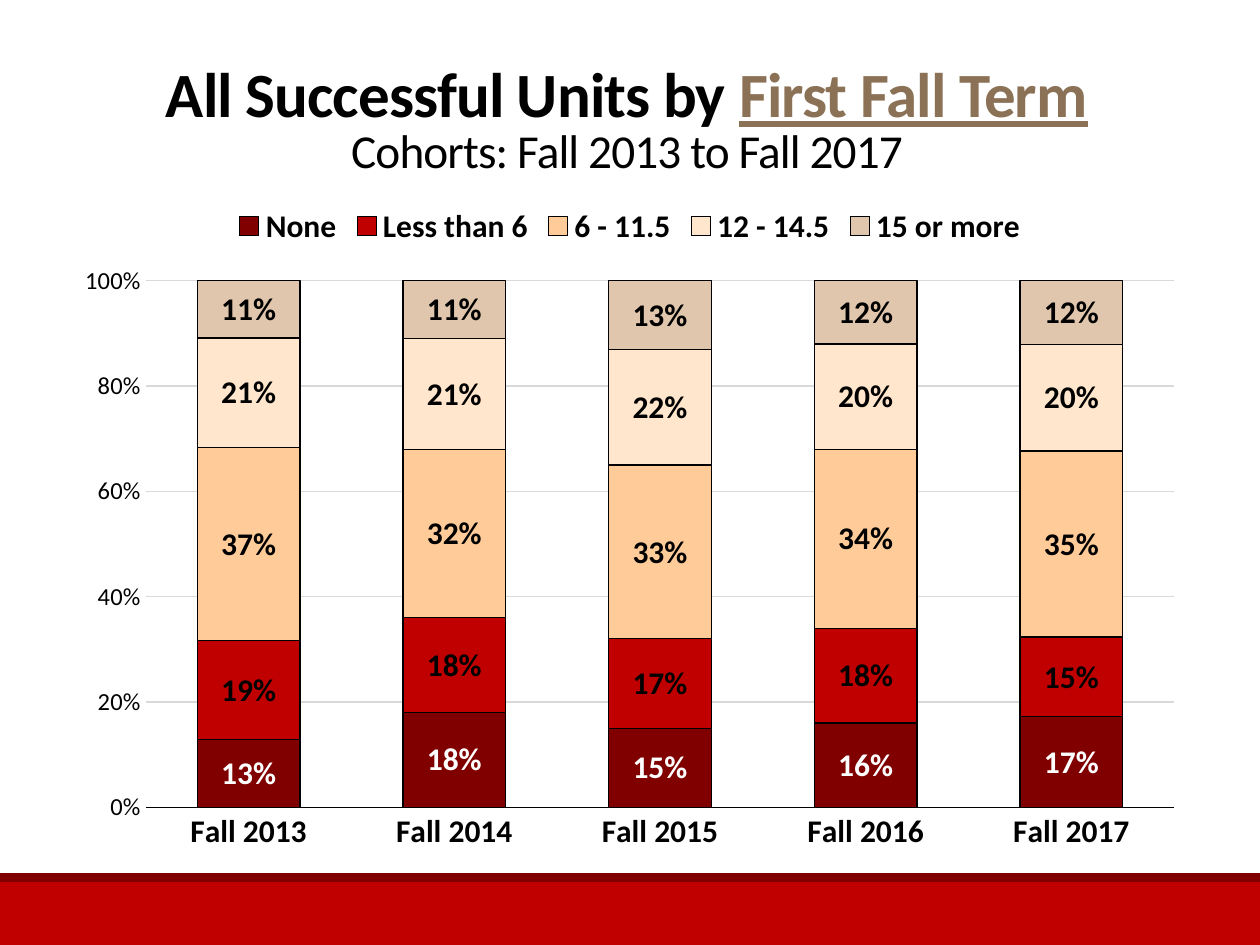
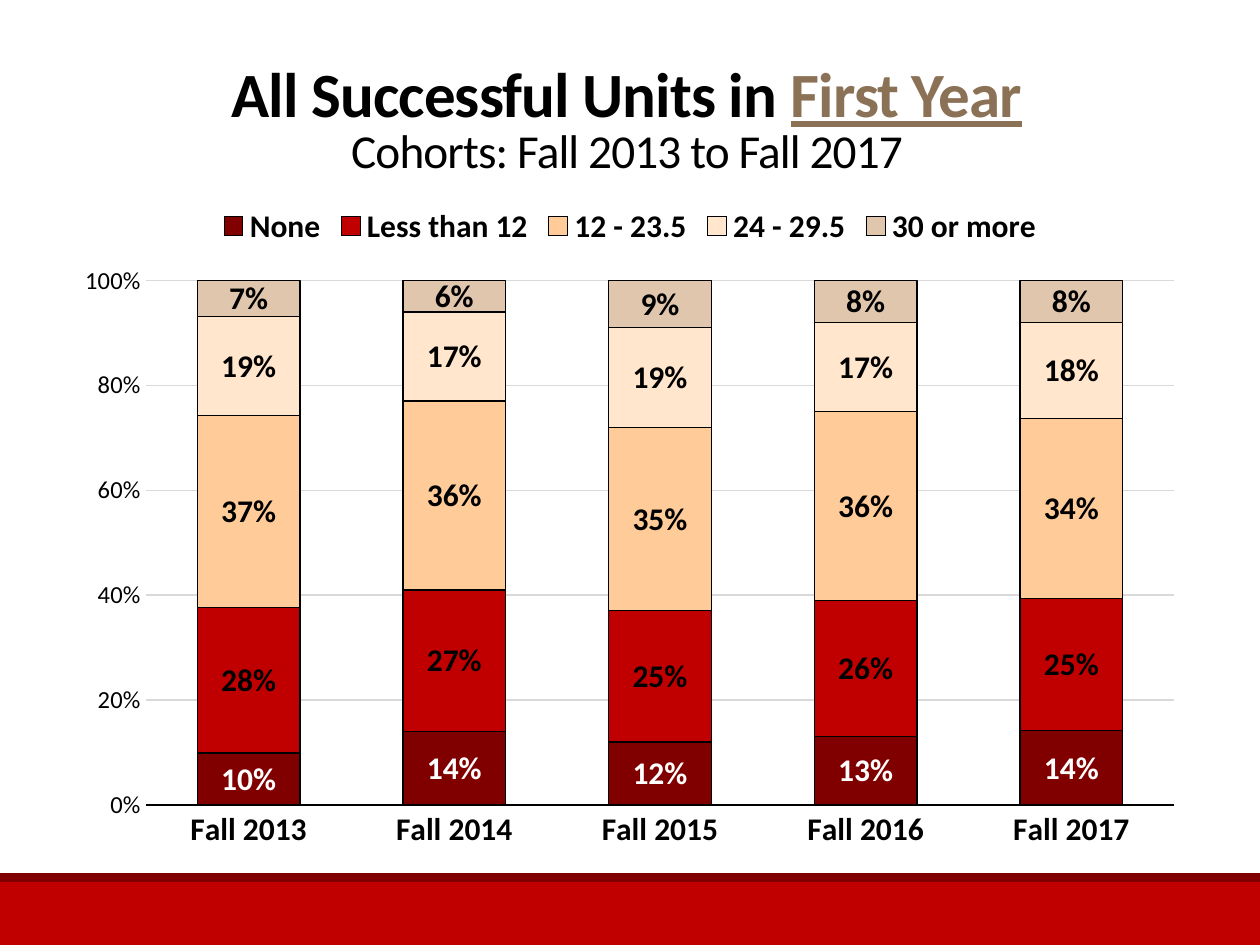
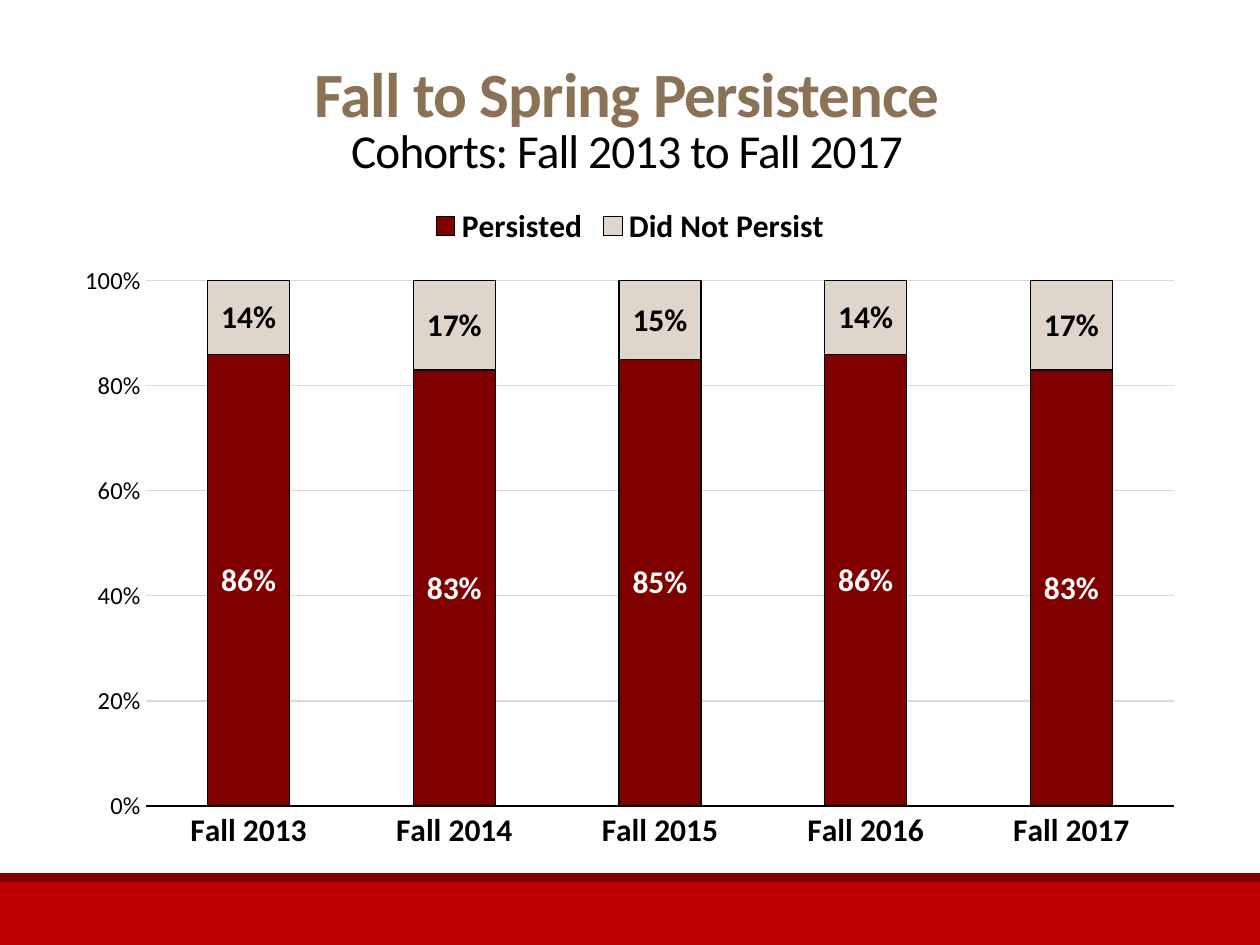
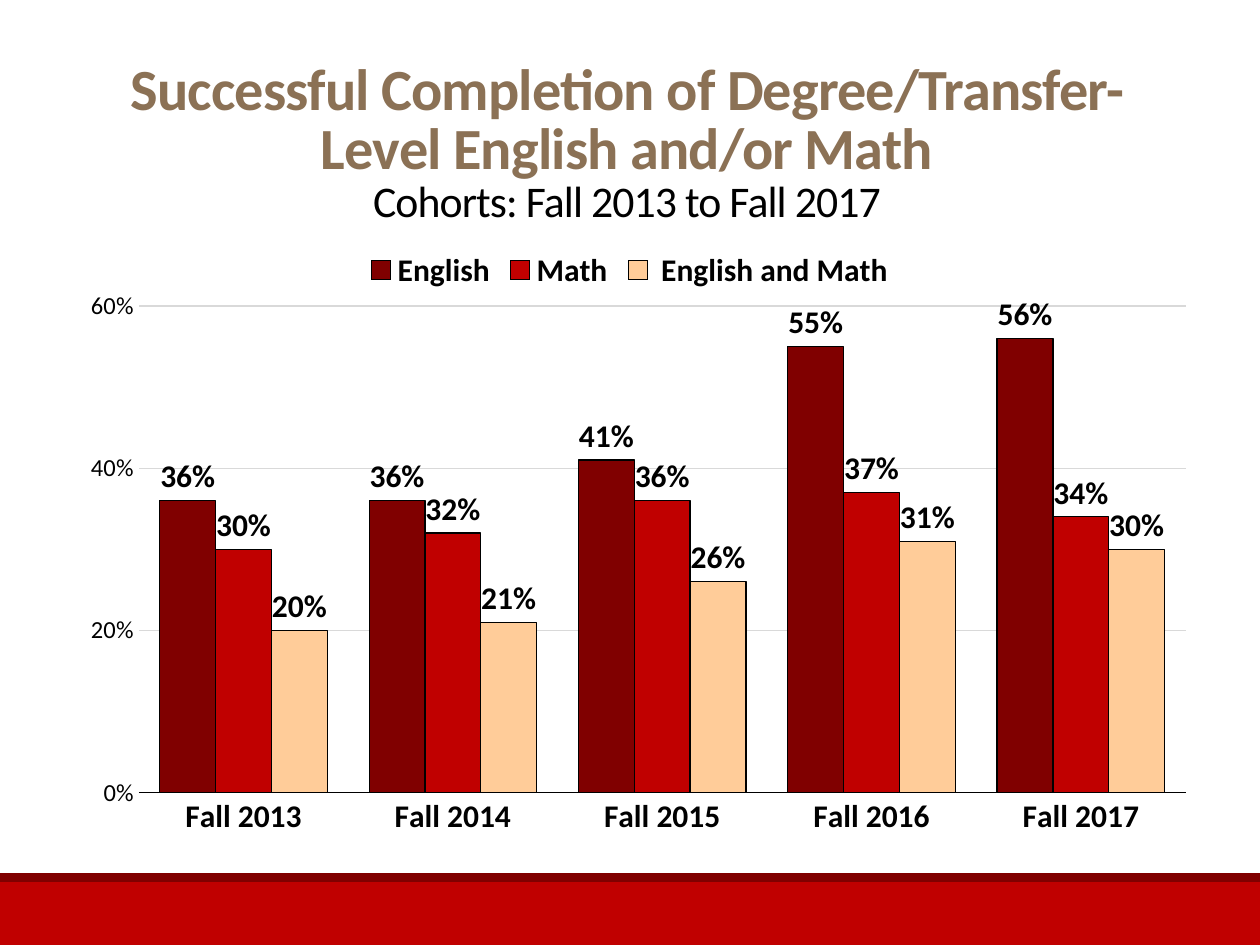
from pptx import Presentation
from pptx.chart.data import CategoryChartData
from pptx.dml.color import RGBColor
from pptx.enum.chart import XL_CHART_TYPE, XL_LABEL_POSITION, XL_LEGEND_POSITION, XL_TICK_MARK
from pptx.enum.shapes import MSO_SHAPE
from pptx.enum.text import MSO_ANCHOR, PP_ALIGN
from pptx.oxml import parse_xml
from pptx.oxml.ns import nsdecls, qn
from pptx.util import Inches, Pt

STACKED = XL_CHART_TYPE.COLUMN_STACKED_100
CLUSTERED = XL_CHART_TYPE.COLUMN_CLUSTERED
NO_TICK = XL_TICK_MARK.NONE
CENTER = XL_LABEL_POSITION.CENTER
OUTSIDE = XL_LABEL_POSITION.OUTSIDE_END
FONT = "Calibri"
COLORS = {
    "black": "000000", "white": "FFFFFF", "maroon": "800000", "red": "C00000",
    "orange": "FFCC99", "cream": "FFE6CC", "tan": "E0C6AD", "stone": "DFD5CB",
    "brown": "8B7155", "grid": "D9D9D9",
}
RGB = {name: RGBColor.from_string(value) for name, value in COLORS.items()}
BANDS = [(7, 0.5, "red"), (6.93, 0.07, "maroon")]
COHORTS = [f"Fall {year}" for year in range(2013, 2018)]
SUBTITLE = "Cohorts: Fall 2013 to Fall 2017"
STACKED_PLOT = (0.073, 0.133, 0.907, 0.784)

# Title runs are (text, color, underlined); series are (name, color, percents)
SLIDES = [
    dict(
        title=[("All Successful Units by ", "black", False), ("First Fall Term", "brown", True)],
        sizes=(36, 27), title_height=1.12, chart_height=5.33,
        kind=STACKED, gap=100, plot=STACKED_PLOT,
        series=[
            ("None", "maroon", (13, 18, 15, 16, 17)),
            ("Less than 6", "red", (19, 18, 17, 18, 15)),
            ("6 - 11.5", "orange", (37, 32, 33, 34, 35)),
            ("12 - 14.5", "cream", (21, 21, 22, 20, 20)),
            ("15 or more", "tan", (11, 11, 13, 12, 12)),
        ]),
    dict(
        title=[("All Successful Units in ", "black", False), ("First Year", "brown", True)],
        sizes=(36, 27), title_height=1.12, chart_height=5.31,
        kind=STACKED, gap=100, plot=STACKED_PLOT,
        series=[
            ("None", "maroon", (10, 14, 12, 13, 14)),
            ("Less than 12", "red", (28, 27, 25, 26, 25)),
            ("12 - 23.5", "orange", (37, 36, 35, 36, 34)),
            ("24 - 29.5", "cream", (19, 17, 19, 17, 18)),
            ("30 or more", "tan", (7, 6, 9, 8, 8)),
        ]),
    dict(
        title=[("Fall to Spring Persistence", "brown", False)],
        sizes=(36, 27), title_height=1.12, chart_height=5.32,
        kind=STACKED, gap=150, plot=STACKED_PLOT,
        series=[
            ("Persisted", "maroon", (86, 83, 85, 86, 83)),
            ("Did Not Persist", "stone", (14, 17, 15, 14, 17)),
        ]),
    dict(
        title=[("Successful Completion of Degree/Transfer-Level English and/or Math",
                "brown", False)],
        sizes=(33.3, 25), title_height=1.47, chart_height=4.95,
        kind=CLUSTERED, gap=75, plot=(0.067, 0.113, 0.923, 0.78),
        series=[
            ("English", "maroon", (36, 36, 41, 55, 56)),
            ("Math", "red", (30, 32, 36, 37, 34)),
            (" English and Math", "orange", (20, 21, 26, 31, 30)),
        ]),
]


def set_font(font, size, color="black", bold=True):
    font.name = FONT
    font.size = Pt(size)
    font.bold = bold
    font.color.rgb = RGB[color]


def add_text(p, text, size, color="black", bold=True, underline=False):
    r = p.add_run()
    r.text = text
    set_font(r.font, size, color, bold)
    r.font.underline = underline
    r._r.get_or_add_rPr().set("spc", "-50")


prs = Presentation()
prs.slide_width, prs.slide_height = Inches(10), Inches(7.5)

for item in SLIDES:
    s = prs.slides.add_slide(prs.slide_layouts[6])
    s.background.fill.solid()
    s.background.fill.fore_color.rgb = RGB["white"]

    # Footer bands
    for top, height, color in BANDS:
        sp = s.shapes.add_shape(MSO_SHAPE.RECTANGLE, 0, Inches(top), prs.slide_width, Inches(height))
        sp.shadow.inherit = False
        sp.fill.solid()
        sp.fill.fore_color.rgb = RGB[color]
        sp.line.fill.background()

    # Title and cohort line
    title_size, subtitle_size = item["sizes"]
    sp = s.shapes.add_textbox(Inches(0.85), Inches(0.41), Inches(8.25), Inches(item["title_height"]))
    tf = sp.text_frame
    tf.word_wrap = True
    tf.vertical_anchor = MSO_ANCHOR.MIDDLE
    p = tf.paragraphs[0]
    p.alignment = PP_ALIGN.CENTER
    p.line_spacing = 0.85
    for text, color, underline in item["title"]:
        add_text(p, text, title_size, color=color, underline=underline)
    p.add_line_break()
    add_text(p, SUBTITLE, subtitle_size, bold=False)

    # Chart, directly below the title
    data = CategoryChartData(number_format="0%")
    data.categories = COHORTS
    for name, color, percents in item["series"]:
        data.add_series(name, [percent / 100 for percent in percents])
    chart = s.shapes.add_chart(
        item["kind"], Inches(0.5), Inches(0.4 + item["title_height"]),
        Inches(9), Inches(item["chart_height"]), data).chart
    set_font(chart.font, 10)
    chart.has_title = False
    chart.has_legend = True
    chart.legend.position = XL_LEGEND_POSITION.TOP
    chart.legend.include_in_layout = False
    set_font(chart.legend.font, 18)

    # Axes
    axis = chart.category_axis
    axis.major_tick_mark = axis.minor_tick_mark = NO_TICK
    axis.format.line.color.rgb = RGB["black"]
    axis.format.line.width = Pt(0.75)
    set_font(axis.tick_labels.font, 18)
    axis = chart.value_axis
    axis.major_tick_mark = axis.minor_tick_mark = NO_TICK
    axis.minimum_scale = 0
    axis.major_unit = 0.2
    axis.format.line.fill.background()
    axis.major_gridlines.format.line.color.rgb = RGB["grid"]
    axis.major_gridlines.format.line.width = Pt(0.75)
    axis.tick_labels.number_format = "0%"
    axis.tick_labels.number_format_is_linked = False
    set_font(axis.tick_labels.font, 14, bold=False)

    # Columns and their labels
    stacked = item["kind"] == STACKED
    plot = chart.plots[0]
    plot.vary_by_categories = False
    plot.gap_width = item["gap"]
    plot.overlap = 100 if stacked else 0
    for series, (name, color, percents) in zip(plot.series, item["series"]):
        series.format.fill.solid()
        series.format.fill.fore_color.rgb = RGB[color]
        series.format.line.color.rgb = RGB["black"]
        series.format.line.width = Pt(0.75)
        series.invert_if_negative = False
        labels = series.data_labels
        labels.show_value = True
        labels.number_format = "0%"
        labels.number_format_is_linked = False
        labels.position = CENTER if stacked else OUTSIDE
        set_font(labels.font, 18, "white" if stacked and color == "maroon" else "black")

    # Inner plot area, as fractions of the chart
    area = chart._chartSpace.find(".//" + qn("c:plotArea"))
    for layout in area.findall(qn("c:layout")):
        area.remove(layout)
    sizes = "".join(f'<c:{tag} val="{value}"/>' for tag, value in zip("xywh", item["plot"]))
    area.insert(0, parse_xml(
        f'<c:layout {nsdecls("c")}><c:manualLayout><c:layoutTarget val="inner"/>'
        f'<c:xMode val="edge"/><c:yMode val="edge"/>{sizes}</c:manualLayout></c:layout>'))

prs.save("out.pptx")
